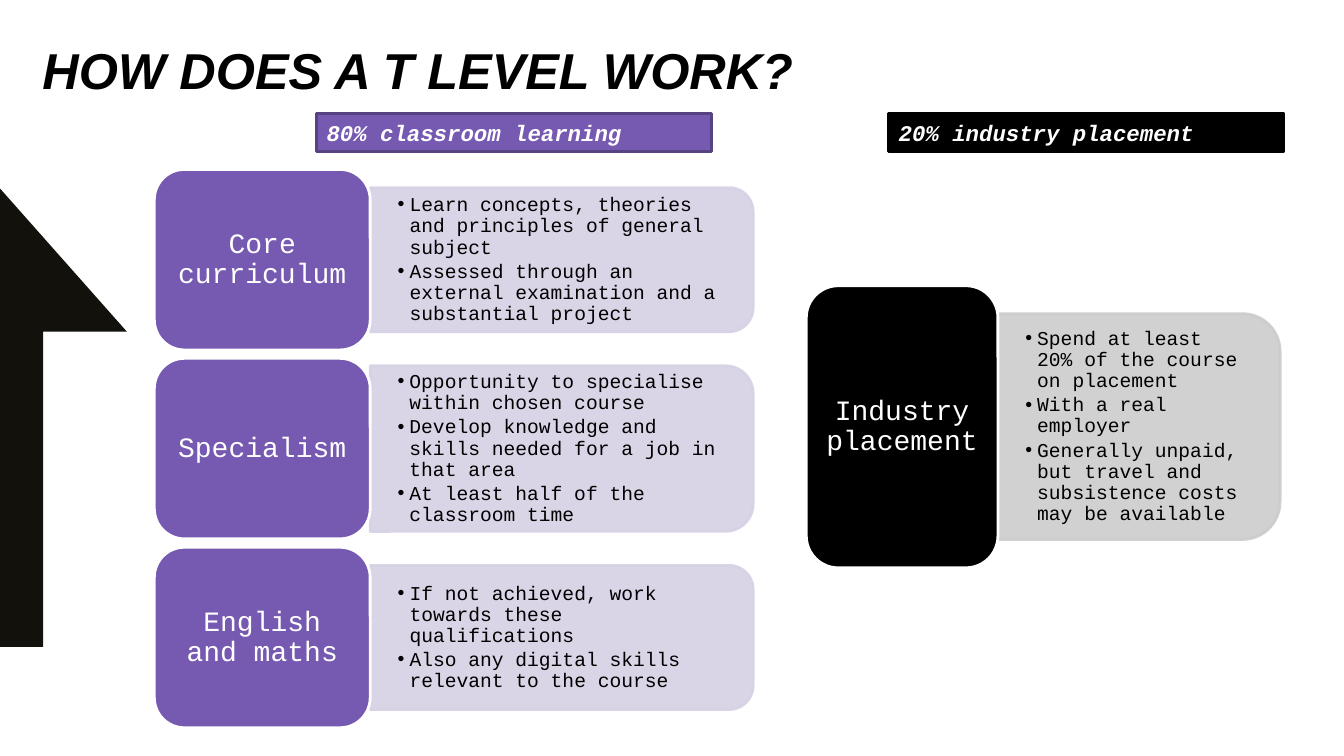
"""Build the slide that explains how a T Level works."""
import lxml.etree
import pptx
import pptx.dml.color
import pptx.enum.shapes
import pptx.enum.text
import pptx.oxml.ns
import pptx.util

Cm = pptx.util.Cm
Pt = pptx.util.Pt
Align = pptx.enum.text.PP_ALIGN
Shapes = pptx.enum.shapes.MSO_SHAPE
qn = pptx.oxml.ns.qn

PURPLE, DARK_PURPLE, PALE_PURPLE = "7659B0", "574282", "D6D1E4"
BLACK, WHITE, GREY, ARROW = "000000", "FFFFFF", "CCCCCC", "12110C"
BODY_FONT, TITLE_FONT = "Courier New", "Arial"

CLASSROOM_LEFT, CLASSROOM_TOP, CLASSROOM_STEP = 3.89, 4.27, 4.76
CLASSROOM_ROWS = [
    ("Core curriculum", 3.63, [
        "Learn concepts, theories and principles of general subject",
        "Assessed through an external examination and a substantial project"]),
    ("Specialism", 4.17, [
        "Opportunity to specialise within chosen course",
        "Develop knowledge and skills needed for a job in that area",
        "At least half of the classroom time"]),
    ("English and maths", 3.63, [
        "If not achieved, work towards these qualifications",
        "Also any digital skills relevant to the course"]),
]
PLACEMENT_POINTS = [
    "Spend at least 20% of the course on placement",
    "With a real employer",
    "Generally unpaid, but travel and subsistence costs may be available",
]


def set_color(color_format, value):
    color_format.rgb = pptx.dml.color.RGBColor.from_string(value)


def paint(shape, fill, line=None):
    shape.shadow.inherit = False
    shape.fill.solid()
    set_color(shape.fill.fore_color, fill)
    if line is None:
        shape.line.fill.background()
    else:
        set_color(shape.line.color, line)
        shape.line.width = Pt(2)


def set_frame(frame, horizontal, vertical):
    frame.word_wrap = True
    frame.auto_size = pptx.enum.text.MSO_AUTO_SIZE.NONE
    frame.vertical_anchor = pptx.enum.text.MSO_ANCHOR.MIDDLE
    frame.margin_left = frame.margin_right = Cm(horizontal)
    frame.margin_top = frame.margin_bottom = Cm(vertical)


def format_text(paragraph, size, color, alignment, spacing, emphasis=False, name=BODY_FONT):
    paragraph.alignment = alignment
    paragraph.line_spacing = spacing
    for run in paragraph.runs:
        run.font.name = name
        run.font.size = Pt(size)
        run.font.bold = run.font.italic = emphasis
        set_color(run.font.color, color)


def add_bullet(paragraph):
    properties = paragraph._p.get_or_add_pPr()
    properties.set("marL", str(Cm(0.3)))
    properties.set("indent", str(-Cm(0.3)))
    lxml.etree.SubElement(properties, qn("a:buFont")).set("typeface", TITLE_FONT)
    lxml.etree.SubElement(properties, qn("a:buChar")).set("char", "•")


def add_title(slide, text):
    title = slide.shapes.title
    title.left, title.top, title.width, title.height = Cm(1.07), Cm(1.19), Cm(27.18), Cm(1.4)
    title.text_frame.text = text
    set_frame(title.text_frame, 0, 0)
    format_text(title.text_frame.paragraphs[0], 36, BLACK, Align.LEFT, 0.8, True, TITLE_FONT)


def add_side_arrow(slide):
    builder = slide.shapes.build_freeform(0, Cm(4.75))
    corners = [(3.2, 8.36), (1.09, 8.36), (1.09, 16.3), (0, 16.3)]
    builder.add_line_segments([(Cm(x), Cm(y)) for x, y in corners], close=True)
    paint(builder.convert_to_shape(), ARROW)


def add_band(slide, left, text, fill, line):
    band = slide.shapes.add_shape(Shapes.RECTANGLE, Cm(left), Cm(2.87), Cm(9.96), Cm(0.94))
    paint(band, fill, line)
    band.text_frame.text = text
    set_frame(band.text_frame, 0.25, 0.13)
    format_text(band.text_frame.paragraphs[0], 16, WHITE, Align.LEFT, 1.0, True)


def add_panel(slide, left, middle, width, height, color, points):
    """Draw a panel rounded on its right side and lay the bullet points over it."""
    panel = slide.shapes.add_shape(
        Shapes.ROUND_2_SAME_RECTANGLE, Cm(left + (width - height) / 2),
        Cm(middle - width / 2), Cm(height), Cm(width))
    panel.rotation = 90
    paint(panel, color, color)
    for color_element in panel._element.spPr.iter(qn("a:srgbClr")):
        lxml.etree.SubElement(color_element, qn("a:alpha")).set("val", "90000")

    inset = 0.05 * height
    box = slide.shapes.add_textbox(
        Cm(left), Cm(middle - height / 2 + inset), Cm(width - inset), Cm(height - 2 * inset))
    box.text_frame.text = "\n".join(points)
    set_frame(box.text_frame, 0.69, 0.36)
    for paragraph in box.text_frame.paragraphs:
        add_bullet(paragraph)
        format_text(paragraph, 14, BLACK, Align.LEFT, 0.9)
        paragraph.space_after = Pt(2.1)


def add_card(slide, left, top, width, height, color, text):
    card = slide.shapes.add_shape(
        Shapes.ROUNDED_RECTANGLE, Cm(left), Cm(top), Cm(width), Cm(height))
    paint(card, color, WHITE)
    card.text_frame.text = text
    set_frame(card.text_frame, 0.2, 0.1)
    paragraph = card.text_frame.paragraphs[0]
    format_text(paragraph, 20, WHITE, Align.CENTER, 0.9)
    paragraph.space_after = Pt(7)


def main():
    presentation = pptx.Presentation()
    presentation.slide_width, presentation.slide_height = Cm(33.87), Cm(19.05)
    slide = presentation.slides.add_slide(presentation.slide_layouts.get_by_name("Title Only"))
    add_side_arrow(slide)
    add_title(slide, "HOW DOES A T LEVEL WORK?")

    width, height = 5.44, 4.55
    for row, (heading, panel_height, points) in enumerate(CLASSROOM_ROWS):
        top = CLASSROOM_TOP + row * CLASSROOM_STEP
        add_panel(slide, CLASSROOM_LEFT + width, top + height / 2, 9.65, panel_height,
                  PALE_PURPLE, points)
        add_card(slide, CLASSROOM_LEFT, top, width, height, PURPLE, heading)

    add_panel(slide, 25.15, 10.75, 7.11, 5.69, GREY, PLACEMENT_POINTS)
    add_card(slide, 20.32, 7.2, 4.83, 7.11, BLACK, "Industry placement")

    add_band(slide, 22.4, "20% industry placement", BLACK, BLACK)
    add_band(slide, 7.98, "80% classroom learning", PURPLE, DARK_PURPLE)
    presentation.save("out.pptx")


if __name__ == "__main__":
    main()
